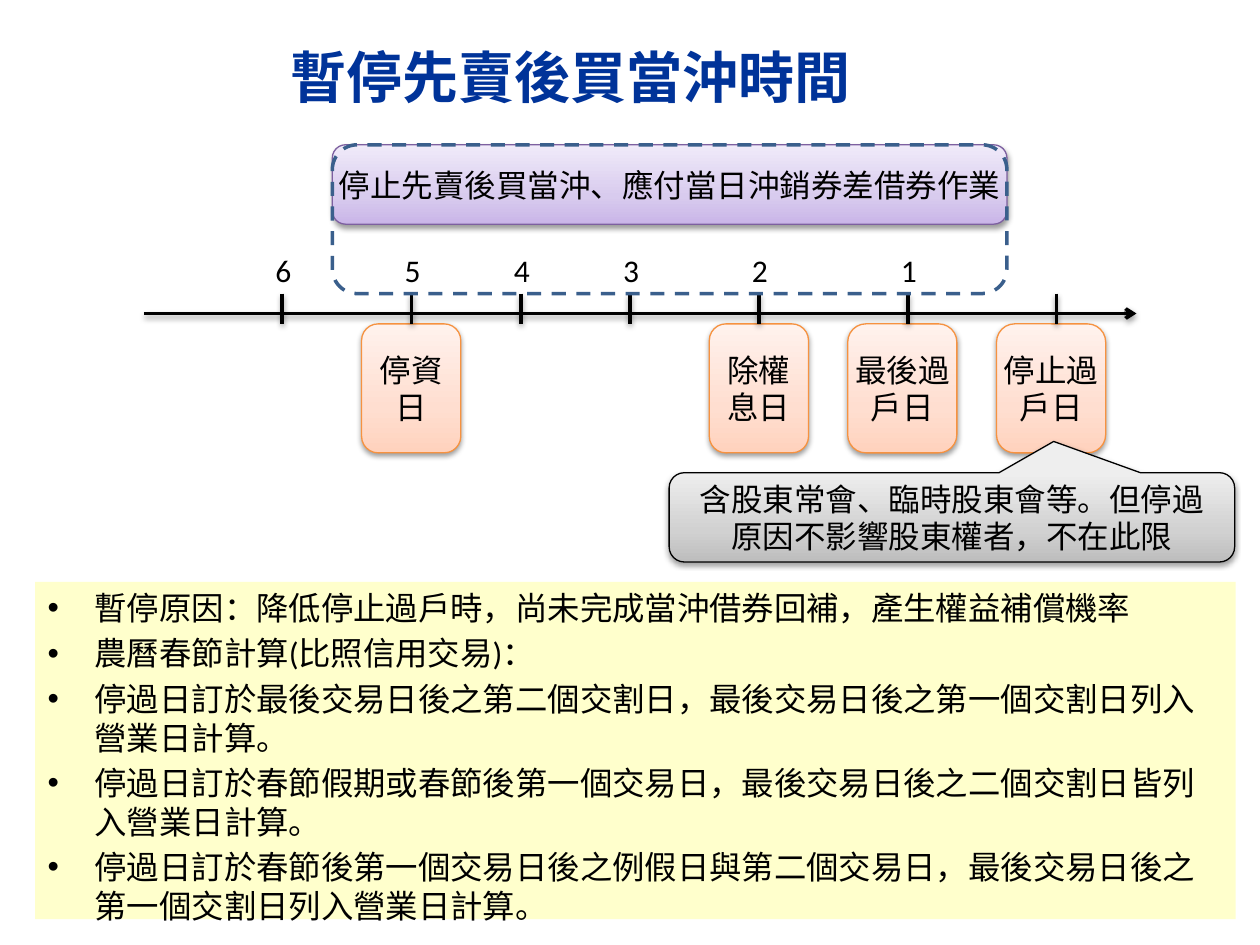
"""Build the timeline slide on suspended sell-first day trading."""
from dataclasses import dataclass

from lxml.etree import SubElement
from pptx import Presentation
from pptx.dml.color import RGBColor
from pptx.enum.dml import MSO_LINE
from pptx.enum.shapes import MSO_CONNECTOR, MSO_SHAPE
from pptx.enum.text import MSO_ANCHOR, PP_ALIGN
from pptx.oxml.ns import qn
from pptx.util import Cm, Pt


@dataclass(frozen=True)
class Theme:
    latin: str = "Calibri"
    chinese: str = "Noto Sans CJK SC"
    title_size: float = 32
    body_size: float = 18.5
    label_size: float = 18
    title: str = "003399"
    ink: str = "000000"
    paper: str = "FFFFFF"
    note: str = "FFFFCC"
    frame: str = "3A5F8C"
    orange_line: str = "F69240"
    purple_line: str = "7D60A0"
    orange: tuple = ("FFD2BD", "FFDED0", "FFF2ED")
    purple: tuple = ("C9B5E8", "D8CBEE", "F0EAF9")
    gray: tuple = ("BDBDBD", "D1D1D1", "EEEEEE")


def add_element(parent, tag, **attributes):
    return SubElement(parent, qn(tag), {key: str(value) for key, value in attributes.items()})


def add_shadow(effects):
    shadow = add_element(effects, "a:outerShdw", blurRad=40000, dist=20000,
                         dir=5400000, rotWithShape=0)
    color = add_element(shadow, "a:srgbClr", val="000000")
    add_element(color, "a:alpha", val=38000)


def write_text(paragraph, text, *, size, font, color, bold=False,
               align=PP_ALIGN.LEFT, bullet=False, space_before=0):
    if bullet:
        properties = paragraph._p.get_or_add_pPr()
        indent = Cm(0.95)
        properties.set("marL", str(indent))
        properties.set("indent", str(-indent))
        add_element(properties, "a:buFont", typeface="Arial")
        add_element(properties, "a:buChar", char="•")
    paragraph.alignment = align
    if space_before:
        paragraph.space_before = Pt(space_before)
    run = paragraph.add_run()
    run.text = text
    run.font.size = Pt(size)
    run.font.bold = bold
    run.font.color.rgb = RGBColor.from_string(color)
    run.font.name = font
    add_element(run._r.get_or_add_rPr(), "a:ea", typeface=Theme.latin)


class SlideBuilder:
    def __init__(self, slide, theme):
        self.slide = slide
        self.theme = theme

    def text_box(self, box, paragraphs, *, fill=None, anchor=MSO_ANCHOR.TOP,
                 wrap=True, space_before=0, **text_format):
        shape = self.slide.shapes.add_textbox(*map(Cm, box))
        if fill:
            shape.fill.solid()
            shape.fill.fore_color.rgb = RGBColor.from_string(fill)
        frame = shape.text_frame
        frame.word_wrap = wrap
        frame.vertical_anchor = anchor
        for index, (text, font) in enumerate(paragraphs):
            paragraph = frame.add_paragraph() if index else frame.paragraphs[0]
            write_text(paragraph, text, font=font,
                       space_before=space_before if index else 0, **text_format)

    def line(self, start, end, arrow=False):
        connector = self.slide.shapes.add_connector(
            MSO_CONNECTOR.STRAIGHT, *map(Cm, start + end))
        connector.line.color.rgb = RGBColor.from_string(self.theme.ink)
        connector.line.width = Pt(2)
        if arrow:
            add_element(connector.line._get_or_add_ln(), "a:tailEnd", type="arrow")
        add_shadow(add_element(connector._element.spPr, "a:effectLst"))

    def outline(self, kind, box, color, width):
        shape = self.slide.shapes.add_shape(kind, *map(Cm, box))
        shape.shadow.inherit = False
        shape.fill.background()
        shape.line.color.rgb = RGBColor.from_string(color)
        shape.line.width = Pt(width)
        return shape

    def dashed_frame(self, box):
        shape = self.outline(MSO_SHAPE.ROUNDED_RECTANGLE, box, self.theme.frame, 2)
        shape.line.dash_style = MSO_LINE.DASH

    def card(self, box, text, colors, line_color, *,
             kind=MSO_SHAPE.ROUNDED_RECTANGLE, adjustments=(), flush=True):
        shape = self.outline(kind, box, line_color, 0.75)
        for index, value in enumerate(adjustments):
            shape.adjustments[index] = value
        shape.fill.gradient()
        shape.fill.gradient_angle = 90
        stops = shape._element.spPr.find(qn("a:gradFill")).find(qn("a:gsLst"))
        stops.clear()
        for position, color in zip((0, 35000, 100000), colors):
            add_element(add_element(stops, "a:gs", pos=position), "a:srgbClr", val=color)
        add_shadow(shape._element.spPr.find(qn("a:effectLst")))
        frame = shape.text_frame
        frame.word_wrap = True
        frame.vertical_anchor = MSO_ANCHOR.MIDDLE
        if flush:
            frame.margin_left = frame.margin_right = 0
            frame.margin_top = frame.margin_bottom = 0
        write_text(frame.paragraphs[0], text, size=self.theme.label_size,
                   font=self.theme.chinese, color=self.theme.ink, align=PP_ALIGN.CENTER)


def main():
    presentation = Presentation()
    presentation.slide_width, presentation.slide_height = Cm(25.4), Cm(19.05)
    theme = Theme()
    builder = SlideBuilder(presentation.slides.add_slide(presentation.slide_layouts[6]), theme)

    builder.text_box((3.5, 0.53, 16, 2), [("暫停先賣後買當沖時間", theme.latin)],
                     size=theme.title_size, color=theme.title, bold=True,
                     align=PP_ALIGN.CENTER, anchor=MSO_ANCHOR.MIDDLE)
    notes = [
        ("暫停原因：降低停止過戶時，尚未完成當沖借券回補，產生權益補償機率", theme.chinese),
        ("農曆春節計算(比照信用交易)：", theme.latin),
        ("停過日訂於最後交易日後之第二個交割日，最後交易日後之第一個交割日列入營業日計算。", theme.latin),
        ("停過日訂於春節假期或春節後第一個交易日，最後交易日後之二個交割日皆列入營業日計算。", theme.latin),
        ("停過日訂於春節後第一個交易日後之例假日與第二個交易日，最後交易日後之第一個交割日列入營業日計算。",
         theme.latin),
    ]
    builder.text_box((0.71, 11.73, 24.2, 6.8), notes, fill=theme.note, size=theme.body_size,
                     color=theme.ink, bullet=True, space_before=3.7)

    tick_top, tick_bottom = 5.92, 6.53
    builder.line((2.9, 6.32), (22.91, 6.32), arrow=True)
    milestones = [("停止過戶日", 20.09, 2.2), ("最後過戶日", 17.09, 2.2),
                  ("除權息日", 14.3, 2), ("停資日", 7.29, 2)]
    for text, left, width in milestones:
        builder.card((left, tick_bottom, width, 2.6), text, theme.orange, theme.orange_line)

    ticks = {"6": 5.69, "5": 8.3, "4": 10.5, "3": 12.7, "2": 15.3, "1": 18.3, "": 21.3}
    for day, center in ticks.items():
        if day:
            builder.text_box((center - 0.39, 4.93, 0.78, 1.02), [(day, theme.latin)],
                             fill=theme.paper, wrap=False, size=theme.label_size,
                             color=theme.ink)
        builder.line((center, tick_top), (center, tick_bottom))

    span_left, span_top, span_width = 6.7, 2.92, 13.6
    builder.card((span_left, span_top, span_width, 1.6),
                 "停止先賣後買當沖、應付當日沖銷券差借券作業", theme.purple, theme.purple_line)
    builder.dashed_frame((span_left, span_top, span_width, tick_top - span_top))
    builder.card((13.49, 9.53, 11.4, 1.8),
                 "含股東常會、臨時股東會等。但停過原因不影響股東權者，不在此限",
                 theme.gray, theme.ink, kind=MSO_SHAPE.ROUNDED_RECTANGULAR_CALLOUT,
                 adjustments=(0.18, -0.85, 0.17), flush=False)
    presentation.save("out.pptx")


if __name__ == "__main__":
    main()
